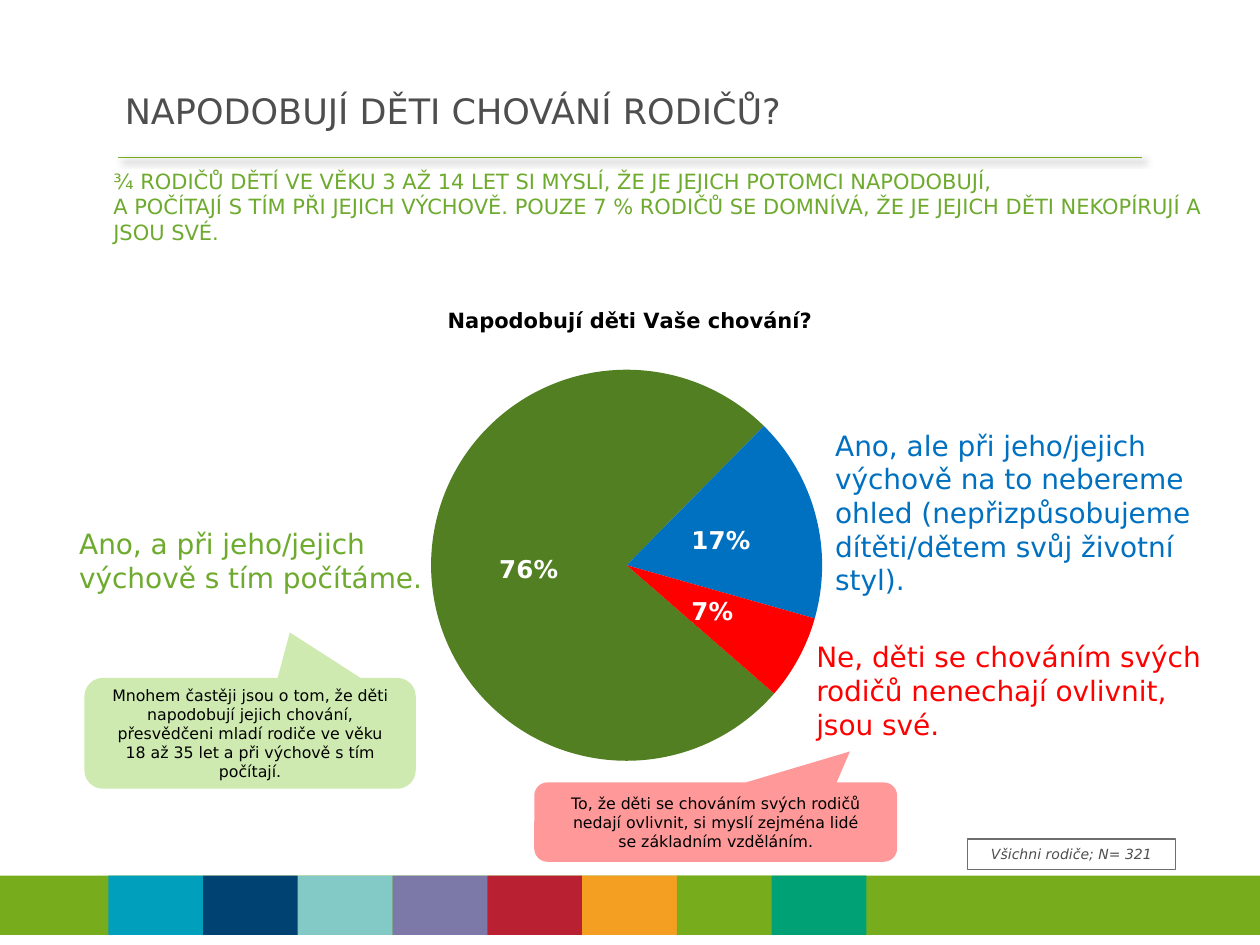
from dataclasses import dataclass
from typing import NamedTuple

from lxml.etree import SubElement
from pptx import Presentation
from pptx.chart.data import CategoryChartData
from pptx.dml.color import RGBColor
from pptx.enum.chart import XL_CHART_TYPE as ChartType, XL_LABEL_POSITION as LabelPos
from pptx.enum.shapes import MSO_CONNECTOR as Connector, MSO_SHAPE as Shape
from pptx.enum.text import MSO_ANCHOR as Anchor, PP_ALIGN as Align
from pptx.oxml import parse_xml
from pptx.oxml.ns import nsdecls, qn
from pptx.util import Inches, Pt


@dataclass(frozen=True)
class Theme:
    font: str = "DejaVu Sans"
    ink: str = "4E4E4E"
    black: str = "000000"
    white: str = "FFFFFF"
    rule: str = "77AD1C"
    lead: str = "6EAA2E"
    frame: str = "6E6E6E"
    yes: str = "527F22"
    yes_text: str = "6DAA2D"
    partly: str = "0070C0"
    no: str = "FF0000"
    yes_note: str = "CEEAB0"
    no_note: str = "FF9999"
    stripes: tuple = ("009FBB", "004272", "83C9C6", "7C78A8",
                      "B92032", "F49F22", "77AD1C", "00A275")
    title_size: int = 20
    answer_size: int = 16
    value_size: int = 14
    lead_size: int = 12
    note_size: int = 9
    base_size: int = 8


THEME = Theme()
CELL = Inches(0.1)
COLUMNS, ROWS = 100, 75


class Box(NamedTuple):
    column: float
    row: float
    columns: float
    rows: float

    def emu(self):
        return [round(cells * CELL) for cells in self]

    def inner(self, left, top, width, height):
        return Box(self.column + left * self.columns, self.row + top * self.rows,
                   width * self.columns, height * self.rows)


def rgb(color):
    return RGBColor.from_string(color)


def style(font, size, color, bold=False, italic=False):
    font.name, font.size = THEME.font, Pt(size)
    font.bold, font.italic = bold, italic
    font.color.rgb = rgb(color)


def write(frame, text, size, color, align=Align.LEFT, anchor=None, **emphasis):
    if anchor is not None:
        frame.word_wrap = True
        frame.vertical_anchor = anchor
    paragraph = frame.paragraphs[0]
    paragraph.text = text
    paragraph.alignment = align
    for run in paragraph.runs:
        style(run.font, size, color, **emphasis)


def add_text(slide, box, text, size, color):
    write(slide.shapes.add_textbox(*box.emu()).text_frame, text, size, color,
          anchor=Anchor.TOP)


def add_panel(slide, box, kind=Shape.RECTANGLE, fill=None, line=None):
    panel = slide.shapes.add_shape(kind, *box.emu())
    panel.shadow.inherit = False
    if fill:
        panel.fill.solid()
        panel.fill.fore_color.rgb = rgb(fill)
    else:
        panel.fill.background()
    if line:
        panel.line.color.rgb = rgb(line)
        panel.line.width = Pt(0.75)
    else:
        panel.line.fill.background()
    return panel


def add_heading(slide, box, title, lead):
    heading = slide.shapes.title
    title_box = box.inner(0, 0, 1, 0.42)
    heading.left, heading.top, heading.width, heading.height = title_box.emu()
    write(heading.text_frame, title, THEME.title_size, THEME.ink, anchor=Anchor.MIDDLE)

    margin = 9.4
    left, top, right, _ = Box(margin, box.row + 6.3, COLUMNS - margin, 0).emu()
    rule = slide.shapes.add_connector(Connector.STRAIGHT, left, top, right, top)
    rule.line.color.rgb = rgb(THEME.rule)
    rule.line.width = Pt(0.75)
    rule._element.spPr.append(parse_xml(
        f'<a:effectLst {nsdecls("a")}><a:outerShdw blurRad="{Pt(4)}" dist="{Pt(3)}" '
        f'dir="2700000" algn="tl" rotWithShape="0"><a:srgbClr val="{THEME.black}">'
        '<a:alpha val="40000"/></a:srgbClr></a:outerShdw></a:effectLst>'))

    add_text(slide, box.inner(-0.01, 0.55, 1, 0.45), lead, THEME.lead_size, THEME.lead)


def add_pie(slide, box, title, shares, colors):
    data = CategoryChartData(number_format="0%")
    data.categories = [str(number) for number in range(1, len(shares) + 1)]
    data.add_series("Series 1", shares)
    chart = slide.shapes.add_chart(ChartType.PIE, *box.emu(), data).chart
    style(chart.font, 18, THEME.black)
    chart.has_legend = False
    chart.has_title = True
    write(chart.chart_title.text_frame, title, THEME.lead_size, THEME.black,
          align=Align.CENTER, bold=True)

    pie = chart.plots[0]
    pie.vary_by_categories = True
    for index, color in enumerate(colors):
        fill = pie.series[0].points[index].format.fill
        fill.solid()
        fill.fore_color.rgb = rgb(color)
    pie.has_data_labels = True
    labels = pie.data_labels
    labels.show_value, labels.show_percentage = True, False
    labels.number_format, labels.number_format_is_linked = "0%", False
    labels.position = LabelPos.CENTER
    style(labels.font, THEME.value_size, THEME.white, bold=True)

    pie_xml = pie._element
    for old in pie_xml.findall(qn("c:firstSliceAng")):
        pie_xml.remove(old)
    SubElement(pie_xml, qn("c:firstSliceAng")).set("val", "131")
    area = pie_xml.getparent()
    for old in area.findall(qn("c:layout")):
        area.remove(old)
    layout = parse_xml(f'<c:layout {nsdecls("c")}><c:manualLayout/></c:layout>')
    settings = (("layoutTarget", "inner"), ("xMode", "edge"), ("yMode", "edge"),
                ("x", "0.205"), ("y", "0.167"), ("w", "0.58"), ("h", "0.78"))
    for tag, value in settings:
        SubElement(layout[0], qn(f"c:{tag}")).set("val", value)
    area.insert(0, layout)


def add_callout(slide, box, text, fill, tip):
    callout = add_panel(slide, box, Shape.ROUNDED_RECTANGULAR_CALLOUT, fill)
    for index, share in enumerate(tip):
        callout.adjustments[index] = share
    write(callout.text_frame, text, THEME.note_size, THEME.black,
          align=Align.CENTER, anchor=Anchor.MIDDLE)


def add_base(slide, box, text):
    base = add_panel(slide, box, line=THEME.frame)
    write(base.text_frame, text, THEME.base_size, THEME.ink,
          align=Align.CENTER, anchor=Anchor.TOP, italic=True)


def add_footer(slide, box):
    add_panel(slide, box, fill=THEME.rule)
    start, width = 0.086, 0.0752
    for index, color in enumerate(THEME.stripes):
        add_panel(slide, box.inner(start + index * width, 0, width, 1), fill=color)


def main():
    deck = Presentation()
    deck.slide_width, deck.slide_height = COLUMNS * CELL, ROWS * CELL
    slide = deck.slides.add_slide(deck.slide_layouts[5])

    add_footer(slide, Box(0, 69.5, COLUMNS, 4.7))
    add_heading(slide, Box(8.9, 6.2, 88.7, 12.2), "NAPODOBUJÍ DĚTI CHOVÁNÍ RODIČŮ?",
                "¾ RODIČŮ DĚTÍ VE VĚKU 3 AŽ 14 LET SI MYSLÍ, ŽE JE JEJICH POTOMCI NAPODOBUJÍ,\n"
                "A POČÍTAJÍ S TÍM PŘI JEJICH VÝCHOVĚ. POUZE 7 % RODIČŮ SE DOMNÍVÁ, "
                "ŽE JE JEJICH DĚTI NEKOPÍRUJÍ A JSOU SVÉ.")
    add_pie(slide, Box(23.2, 22.7, 53.6, 39.8), "Napodobují děti Vaše chování?",
            (0.76, 0.17, 0.07), (THEME.yes, THEME.partly, THEME.no))

    answers = (
        (Box(5.3, 41.3, 29.9, 6.4), THEME.yes_text,
         "Ano, a při jeho/jejich výchově s tím počítáme."),
        (Box(65.3, 33.5, 31.5, 14.5), THEME.partly,
         "Ano, ale při jeho/jejich výchově na to nebereme ohled "
         "(nepřizpůsobujeme dítěti/dětem svůj životní styl)."),
        (Box(63.8, 50.3, 34.8, 9.1), THEME.no,
         "Ne, děti se chováním svých rodičů nenechají ovlivnit, jsou své."),
    )
    for box, color, text in answers:
        add_text(slide, box, text, THEME.answer_size, color)

    add_callout(slide, Box(6.7, 53.8, 26.3, 8.8),
                "Mnohem častěji jsou o tom, že děti napodobují jejich chování, přesvědčeni "
                "mladí rodiče ve věku\n18 až 35 let a při výchově s tím počítají.",
                THEME.yes_note, (0.12, -0.91))
    add_callout(slide, Box(42.4, 62.1, 28.8, 6.3),
                "To, že děti se chováním svých rodičů nedají ovlivnit, si myslí zejména lidé\n"
                "se základním vzděláním.", THEME.no_note, (0.37, -0.89))
    add_base(slide, Box(76.8, 66.6, 16.5, 2.4), "Všichni rodiče; N= 321")
    deck.save("out.pptx")


if __name__ == "__main__":
    main()
